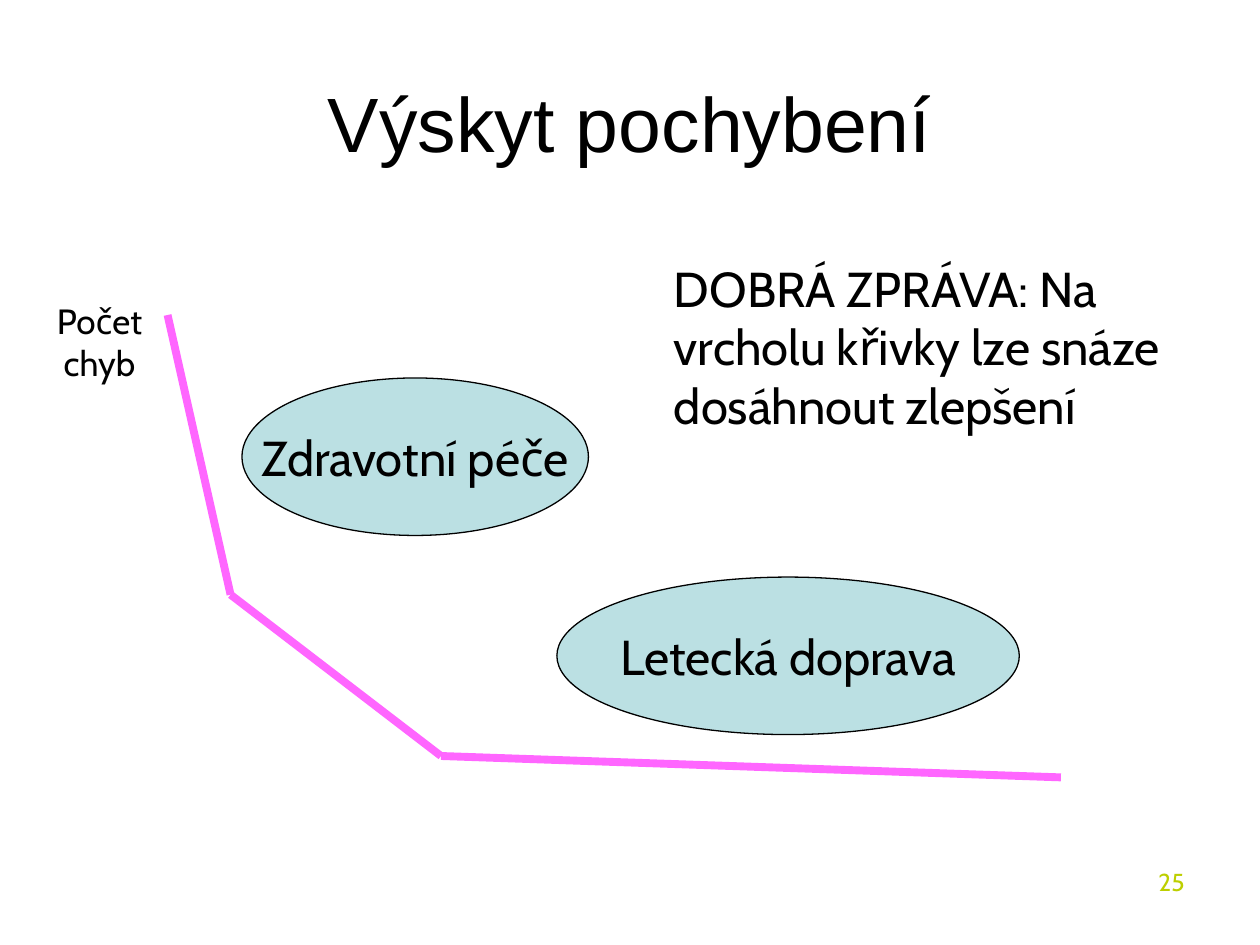
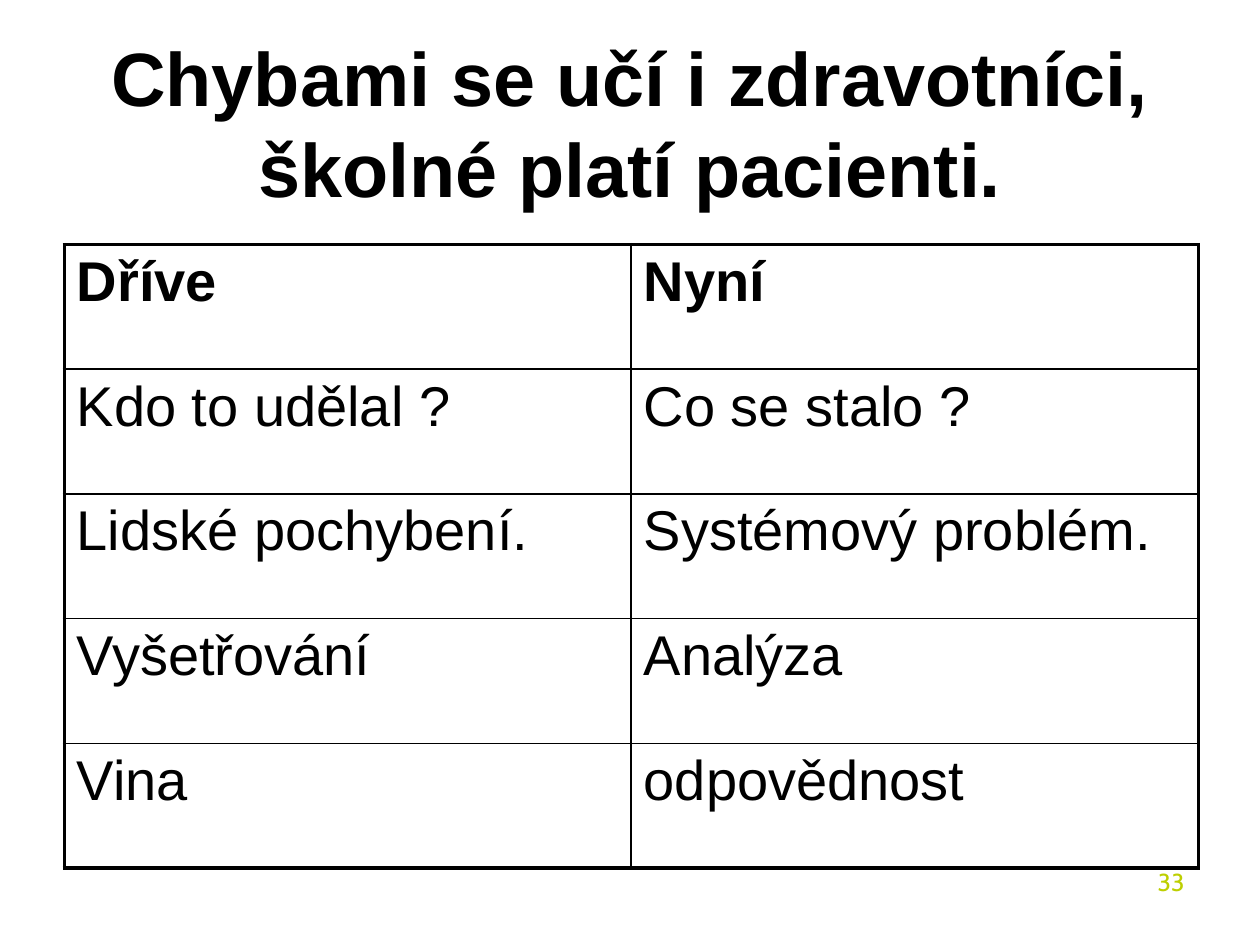
"""Builds two slides on errors in health care."""
import itertools

import pptx
import pptx.dml.color
import pptx.enum.shapes
import pptx.enum.text
import pptx.oxml
import pptx.oxml.ns
import pptx.util

RGB = pptx.dml.color.RGBColor
ALIGN = pptx.enum.text.PP_ALIGN
ANCHOR = pptx.enum.text.MSO_ANCHOR
FIT = pptx.enum.text.MSO_AUTO_SIZE
KIND = pptx.enum.shapes

BLACK = RGB(0x00, 0x00, 0x00)
WHITE = RGB(0xFF, 0xFF, 0xFF)
PINK = RGB(0xFF, 0x66, 0xFF)
TEAL = RGB(0xBB, 0xE0, 0xE3)
LIME = RGB(0xBD, 0xCF, 0x00)

HEAD, BODY = "Arial", "Cabin"
SCALE = 9144
TITLE = (50, 34, 900, 125)
PAGE = (717, 683, 233, 52)
CURVE = [(0, 0), (50, 222), (217, 350), (709, 367)]
OVALS = [
    ("Zdravotní péče", (157, 83, 275, 125)),
    ("Letecká doprava", (407, 241, 367, 125)),
]
ROWS = [
    ("Dříve", "Nyní"),
    ("Kdo to udělal ?", "Co se stalo ?"),
    ("Lidské pochybení.", "Systémový problém."),
    ("Vyšetřování", "Analýza"),
    ("Vina", "odpovědnost"),
]
THICK, THIN = 2.25, 1


def px(*nums):
    """Turn px lengths into EMU."""
    return [pptx.util.Emu(num * SCALE) for num in nums]


def style(frame, size, font=BODY, color=BLACK, bold=False, align=ALIGN.LEFT):
    """Format every paragraph and run of a text frame."""
    for para in frame.paragraphs:
        para.alignment = align
        for run in para.runs:
            run.font.size = pptx.util.Pt(size)
            run.font.name = font
            run.font.bold = bold
            run.font.color.rgb = color


def note(slide, box, text, size, wrap=True, **look):
    """Add a text box and return it."""
    item = slide.shapes.add_textbox(*px(*box))
    frame = item.text_frame
    frame.word_wrap = wrap
    frame.text = text
    style(frame, size, **look)
    return item


def start(deck, text, page, size, bold=False):
    """Add a slide with its title and page number."""
    slide = deck.slides.add_slide(deck.slide_layouts[5])
    title = slide.shapes.title
    title.left, title.top, title.width, title.height = px(*TITLE)
    frame = title.text_frame
    frame.text = text
    frame.auto_size = FIT.NONE
    frame.vertical_anchor = ANCHOR.MIDDLE
    style(frame, size, HEAD, bold=bold, align=ALIGN.CENTER)
    note(slide, PAGE, page, 14, color=LIME, align=ALIGN.RIGHT)
    return slide


def curve(slide, left, top):
    """Draw the falling error curve as a group of lines."""
    group = slide.shapes.add_group_shape()
    for (ax, ay), (bx, by) in itertools.pairwise(CURVE):
        ends = px(left + ax, top + ay, left + bx, top + by)
        line = group.shapes.add_connector(KIND.MSO_CONNECTOR.STRAIGHT, *ends)
        line.line.color.rgb = PINK
        line.line.width = pptx.util.Pt(4.5)
        props = line._element.spPr
        props.append(pptx.oxml.parse_xml(
            f"<a:effectLst {pptx.oxml.ns.nsdecls('a')}/>"))


def oval(slide, text, box):
    """Draw a labelled ellipse."""
    shape = slide.shapes.add_shape(KIND.MSO_SHAPE.OVAL, *px(*box))
    shape.shadow.inherit = False
    shape.fill.solid()
    shape.fill.fore_color.rgb = TEAL
    shape.line.color.rgb = BLACK
    shape.line.width = pptx.util.Pt(0.75)
    frame = shape.text_frame
    frame.text = text
    frame.word_wrap = False
    frame.vertical_anchor = ANCHOR.MIDDLE
    style(frame, 28, align=ALIGN.CENTER)


def graph(slide, left, top):
    """Place the curve, its label, the ellipses and the message."""
    curve(slide, left + 98, top + 50)
    note(slide, (left, top + 33, 88, 77), "Počet\nchyb", 20, wrap=False,
         align=ALIGN.CENTER)
    for text, (dx, dy, wide, high) in OVALS:
        oval(slide, text, (left + dx, top + 17 + dy, wide, high))
    news = note(slide, (left + 490, top, 425, 197),
                "DOBRÁ ZPRÁVA: Na vrcholu křivky lze snáze dosáhnout zlepšení",
                28)
    news.fill.solid()
    news.fill.fore_color.rgb = WHITE


def edge(cell, side, width):
    """Give one side of a cell a black border."""
    props = cell._tc.get_or_add_tcPr()
    props.append(pptx.oxml.parse_xml(
        f'<a:ln{side} {pptx.oxml.ns.nsdecls("a")} w="{pptx.util.Pt(width)}">'
        f'<a:solidFill><a:srgbClr val="{BLACK}"/></a:solidFill></a:ln{side}>'))


def grid(slide, box):
    """Draw the table that sets past against present."""
    rows, cols = len(ROWS), len(ROWS[0])
    table = slide.shapes.add_table(rows, cols, *px(*box)).table
    table.first_row = table.horz_banding = False
    for row, texts in enumerate(ROWS):
        for col, text in enumerate(texts):
            cell = table.cell(row, col)
            outer = {"L": col == 0, "R": col == cols - 1,
                     "T": row == 0, "B": row == rows - 1}
            for side, rim in outer.items():
                edge(cell, side, THICK if rim else THIN)
            cell.fill.background()
            cell.text_frame.text = text
            style(cell.text_frame, 32, HEAD, bold=row == 0)


def main():
    """Build and save the slides."""
    deck = pptx.Presentation()
    deck.slide_width, deck.slide_height = px(1000, 750)
    graph(start(deck, "Výskyt pochybení", "25", 44), 35, 200)
    learn = start(deck, "Chybami se učí i zdravotníci, školné platí pacienti.",
                  "33", 43.2, bold=True)
    grid(learn, (51, 194, 900, 495))
    deck.save("out.pptx")


if __name__ == "__main__":
    main()
